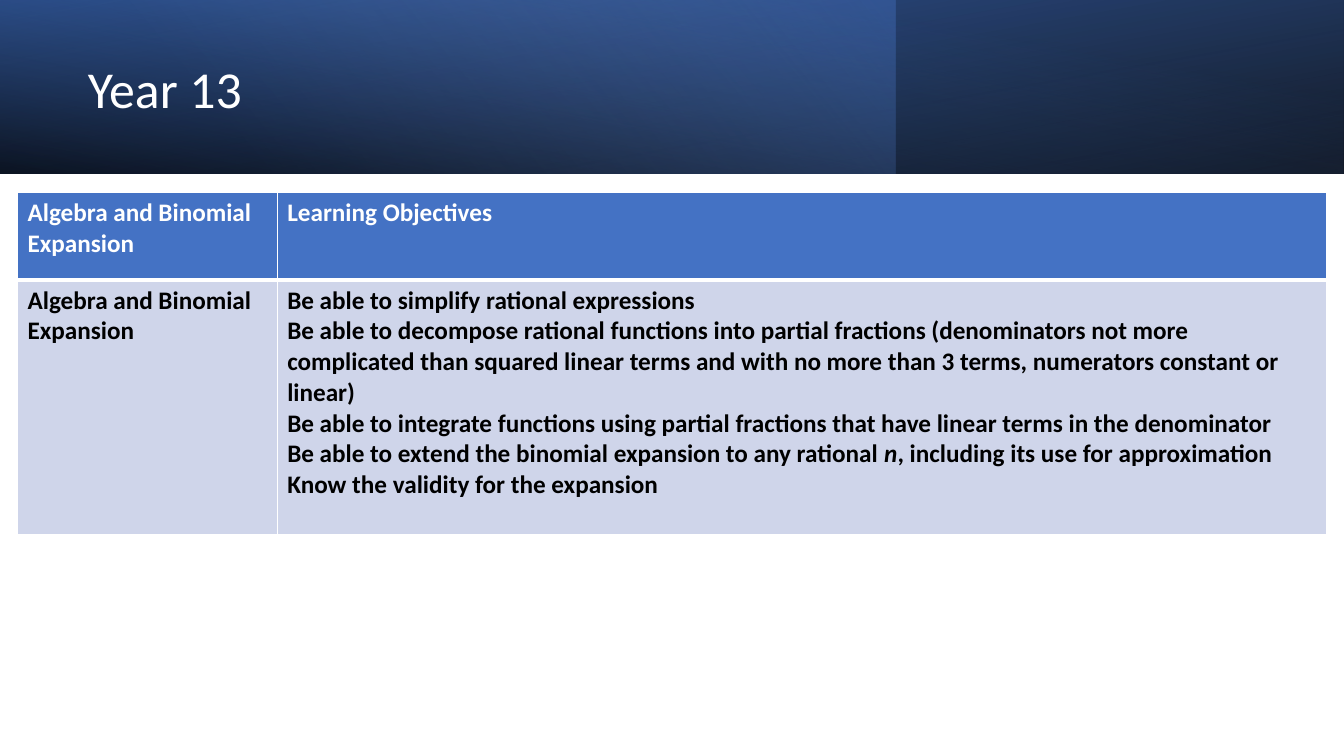
from lxml import etree
from pptx import Presentation
from pptx.dml.color import RGBColor
from pptx.enum.shapes import MSO_SHAPE
from pptx.enum.text import MSO_ANCHOR, PP_ALIGN
from pptx.oxml.ns import qn
from pptx.util import Pt

RECTANGLE = MSO_SHAPE.RECTANGLE
MIDDLE = MSO_ANCHOR.MIDDLE
LEFT = PP_ALIGN.LEFT

FONT = "Calibri"
WHITE, BLACK = "FFFFFF", "000000"
BLUE, DEEP_BLUE, SKY_BLUE, PALE_BLUE = "4472C4", "2F5597", "8FAADC", "CFD5EA"
SLIDE_WIDTH, SLIDE_HEIGHT = 960, 540
BANNER_HEIGHT = 124

# Each text is a list of paragraphs; each paragraph is a list of (run, italic)
TOPIC = [[("Algebra and Binomial Expansion", False)]]
HEADING = [[("Learning Objectives", False)]]
OBJECTIVES = [
    [("Be able to simplify rational expressions", False)],
    [("Be able to decompose rational functions into partial fractions "
      "(denominators not more complicated than squared linear terms and with "
      "no more than 3 terms, numerators constant or linear)", False)],
    [("Be able to integrate functions using partial fractions that have "
      "linear terms in the denominator", False)],
    [("Be able to extend the binomial expansion to any rational ", False),
     ("n", True), (", including its use for approximation", False)],
    [("Know the validity for the expansion", False)],
]


def color(value):
    return RGBColor.from_string(value)


def add_color(parent, value, opacity=100):
    element = etree.SubElement(parent, qn("a:srgbClr"), val=value)
    if opacity < 100:
        etree.SubElement(element, qn("a:alpha"), val=str(opacity * 1000))


def add_gradient_band(slide, width, height, stops, angle, flip=False, rotation=0):
    """Stops are (position, color, opacity), the numbers in percent."""
    band = slide.shapes.add_shape(RECTANGLE, 0, 0, Pt(width), Pt(height))
    band.shadow.inherit = False
    band.line.fill.background()
    band.rotation = rotation
    properties = band._element.spPr
    if flip:
        properties.find(qn("a:xfrm")).set("flipH", "1")

    # Transparent gradient stops
    band.fill.background()
    gradient = etree.Element(qn("a:gradFill"), rotWithShape="1")
    stop_list = etree.SubElement(gradient, qn("a:gsLst"))
    for position, value, opacity in stops:
        stop = etree.SubElement(stop_list, qn("a:gs"), pos=str(position * 1000))
        add_color(stop, value, opacity)
    etree.SubElement(gradient, qn("a:lin"), ang=str(angle * 60000), scaled="0")
    properties.replace(properties.find(qn("a:noFill")), gradient)


def add_banner(slide, width, height):
    # Layered background
    add_gradient_band(slide, width, height,
                      [(0, BLACK, 96), (100, DEEP_BLUE, 100)], 100, True, 180)
    add_gradient_band(slide, width * 2 / 3, height,
                      [(0, BLUE, 41), (74, SKY_BLUE, 0)], 140)
    add_gradient_band(slide, width, height,
                      [(0, BLACK, 63), (78, BLUE, 15)], 260, True)

    # Title, brought in front of the bands
    title = slide.shapes.title
    slide.shapes._spTree.append(title._element)
    title.left, title.top = Pt(55.5), Pt(19.5)
    title.width, title.height = Pt(556), Pt(91.5)
    title.text_frame.text = "Year 13"
    title.text_frame.vertical_anchor = MIDDLE
    paragraph = title.text_frame.paragraphs[0]
    paragraph.alignment = LEFT
    paragraph.line_spacing = 0.9
    paragraph.font.name = FONT
    paragraph.font.size = Pt(37)
    paragraph.font.color.rgb = color(WHITE)


def set_borders(cell, bottom):
    properties = cell._tc.get_or_add_tcPr()
    widths = {"a:lnL": 1, "a:lnR": 1, "a:lnT": 1, "a:lnB": bottom}
    for index, (tag, width) in enumerate(widths.items()):
        line = etree.Element(qn(tag), w=str(Pt(width)))
        add_color(etree.SubElement(line, qn("a:solidFill")), WHITE)
        properties.insert(index, line)


def fill_cell(cell, paragraphs, text_color, fill_color, bottom):
    cell.fill.solid()
    cell.fill.fore_color.rgb = color(fill_color)
    set_borders(cell, bottom)
    frame = cell.text_frame
    for index, runs in enumerate(paragraphs):
        paragraph = frame.add_paragraph() if index else frame.paragraphs[0]
        paragraph.font.name = FONT
        paragraph.font.size = Pt(18)
        paragraph.font.bold = True
        paragraph.font.color.rgb = color(text_color)
        for text, italic in runs:
            run = paragraph.add_run()
            run.text = text
            run.font.italic = italic


def add_objectives_table(slide, left, top, width):
    row_heights = (62.5, 182)
    topic_width = 185.5
    table = slide.shapes.add_table(2, 2, Pt(left), Pt(top), Pt(width),
                                   Pt(sum(row_heights))).table
    table.columns[0].width = Pt(topic_width)
    table.columns[1].width = Pt(width - topic_width)
    rows = [((TOPIC, HEADING), WHITE, BLUE, 3),
            ((TOPIC, OBJECTIVES), BLACK, PALE_BLUE, 1)]
    for row_index, (texts, text_color, fill_color, bottom) in enumerate(rows):
        table.rows[row_index].height = Pt(row_heights[row_index])
        for column_index, paragraphs in enumerate(texts):
            fill_cell(table.cell(row_index, column_index), paragraphs,
                      text_color, fill_color, bottom)


def main():
    presentation = Presentation()
    presentation.slide_width = Pt(SLIDE_WIDTH)
    presentation.slide_height = Pt(SLIDE_HEIGHT)
    slide = presentation.slides.add_slide(presentation.slide_layouts[5])
    add_banner(slide, SLIDE_WIDTH, BANNER_HEIGHT)
    add_objectives_table(slide, 12.5, 137.5, 935)
    presentation.save("out.pptx")


if __name__ == "__main__":
    main()
